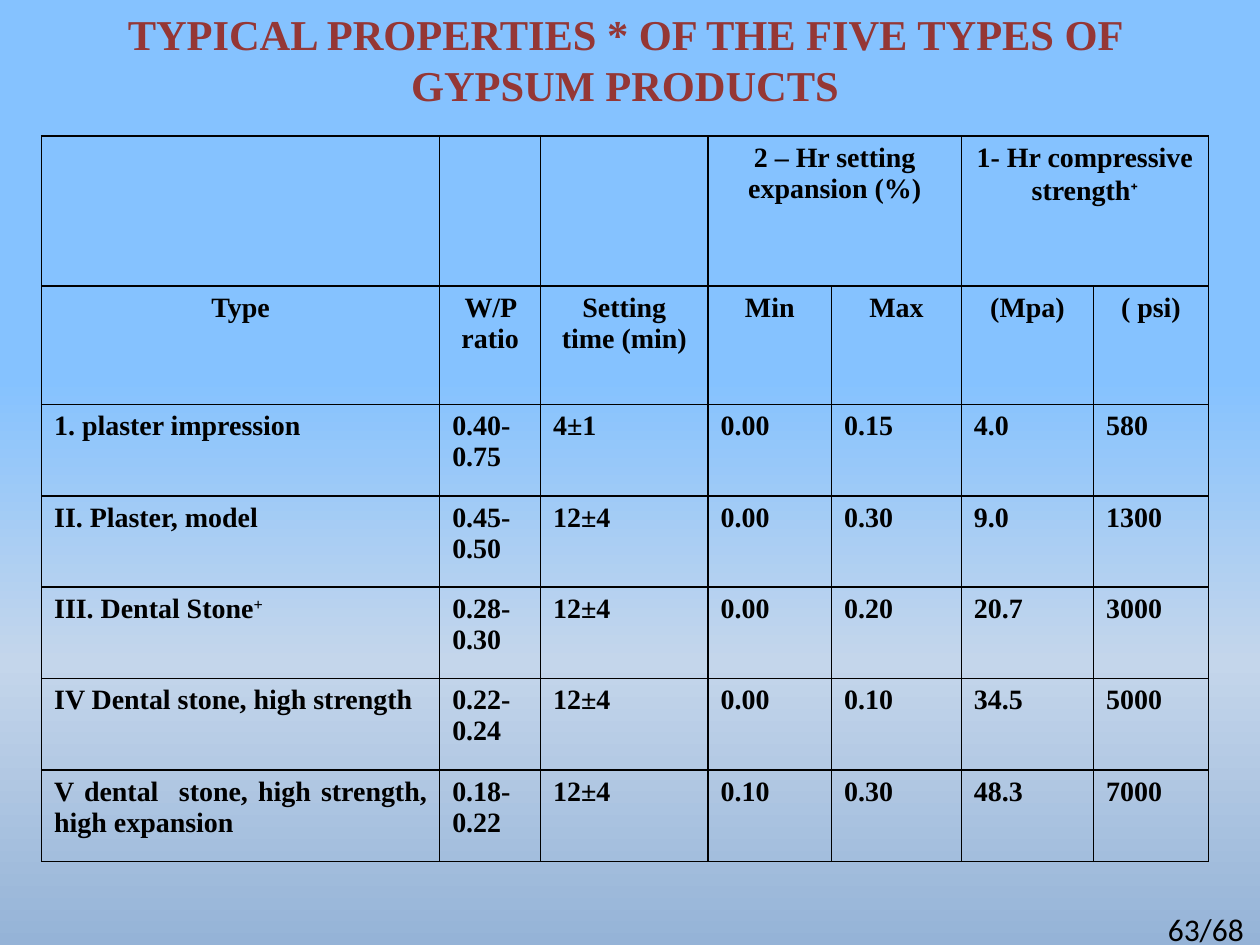
from dataclasses import dataclass
from lxml import etree
from pptx import Presentation
from pptx.dml.color import RGBColor
from pptx.enum.text import MSO_ANCHOR as Anchor, PP_ALIGN as Align
from pptx.oxml.ns import qn
from pptx.slide import Slide
from pptx.util import Inches, Pt

BLACK = RGBColor(0x00, 0x00, 0x00)
BRICK = RGBColor(0x95, 0x37, 0x35)
SKY = RGBColor(0x85, 0xC2, 0xFF)
MIST = RGBColor(0xC4, 0xD6, 0xEB)
STEEL = RGBColor(0x95, 0xB3, 0xD7)

WIDTH, HEIGHT = Inches(10), Inches(7.5)
COLUMNS = [31.6, 8, 13.3, 9.8, 10.3, 10.5, 9.1]
ROWS = [15.87, 12.53] + [9.67] * 5
MERGES = [(3, 4), (5, 6)]
SUPERSCRIPT = "+"

HEADINGS = [
    ["", "", "", "2 – Hr setting expansion (%)", "", "1- Hr compressive strength+", ""],
    ["Type", "W/P ratio", "Setting time (min)", "Min", "Max", "(Mpa)", "( psi)"],
]
PRODUCTS = [
    ["1. plaster impression", "0.40-0.75", "4±1", "0.00", "0.15", "4.0", "580"],
    ["II. Plaster, model", "0.45-0.50", "12±4", "0.00", "0.30", "9.0", "1300"],
    ["III. Dental Stone+", "0.28-0.30", "12±4", "0.00", "0.20", "20.7", "3000"],
    ["IV Dental stone, high strength", "0.22-0.24", "12±4", "0.00", "0.10", "34.5", "5000"],
    ["V dental  stone, high strength, high expansion", "0.18-0.22", "12±4", "0.10", "0.30", "48.3", "7000"],
]


def across(percent):
    """Turn a percentage of the slide's width into a length."""
    return round(WIDTH * percent / 100)


def down(percent):
    """Turn a percentage of the slide's height into a length."""
    return round(HEIGHT * percent / 100)


@dataclass
class PropertySlide:
    """Hold the current slide and its text style, and add elements to it."""

    slide: Slide
    font: str = "Times New Roman"
    heading_mark_font: str = "Cabin"
    body_size: float = 16
    border: float = 1

    def background(self, stops):
        """Fill the slide with a gradient running from top to bottom."""
        fill = self.slide.background.fill
        fill.gradient()
        fill.gradient_angle = 270
        stop_list = self.slide.element.find(".//" + qn("a:gsLst"))
        for stop in list(stop_list):
            stop_list.remove(stop)
        for position, color in stops:
            stop = etree.SubElement(stop_list, qn("a:gs"), pos=str(position * 1000))
            etree.SubElement(stop, qn("a:srgbClr"), val=str(color))

    def run(self, paragraph, text, color=BLACK, **format_values):
        """Add a run in the slide's style, with any differing values."""
        run = paragraph.add_run()
        run.text = text
        run.font.color.rgb = color
        style = {"name": self.font, "size": Pt(self.body_size), "bold": True}
        for name, value in {**style, **format_values}.items():
            setattr(run.font, name, value)
        return run

    def text(self, area, text, align, anchor=Anchor.TOP, wrap=True, **format_values):
        """Add a text box with one paragraph."""
        left, top, width, height = area
        box = self.slide.shapes.add_textbox(across(left), down(top), across(width), down(height))
        frame = box.text_frame
        for name, value in {"word_wrap": wrap, "vertical_anchor": anchor}.items():
            setattr(frame, name, value)
        paragraph = frame.paragraphs[0]
        paragraph.alignment = align
        self.run(paragraph, text, **format_values)

    def cell(self, cell, text, align, mark_font):
        """Write a clear cell with black borders."""
        properties = cell._tc.get_or_add_tcPr()
        for side in ("a:lnL", "a:lnR", "a:lnT", "a:lnB"):
            line = etree.SubElement(properties, qn(side), w=str(Pt(self.border)))
            solid = etree.SubElement(line, qn("a:solidFill"))
            etree.SubElement(solid, qn("a:srgbClr"), val=str(BLACK))
        cell.fill.background()
        paragraph = cell.text_frame.paragraphs[0]
        paragraph.alignment = align
        body, mark, _ = text.partition(SUPERSCRIPT)
        if body:
            self.run(paragraph, body)
        if mark:
            raised = self.run(paragraph, mark, name=mark_font)
            raised.font._element.set("baseline", "30000")

    def table(self, left, top, headings, products):
        """Add the table of properties, with centred headings."""
        frame = self.slide.shapes.add_table(
            len(ROWS), len(COLUMNS), across(left), down(top), across(sum(COLUMNS)), down(sum(ROWS)))
        table = frame.table
        for name in ("first_row", "horz_banding"):
            setattr(table, name, False)
        for column, share in zip(table.columns, COLUMNS):
            column.width = across(share)
        for row, share in zip(table.rows, ROWS):
            row.height = down(share)
        for first, last in MERGES:
            table.cell(0, first).merge(table.cell(0, last))
        for row, texts in enumerate(headings + products):
            is_heading = row < len(headings)
            align = Align.CENTER if is_heading else Align.JUSTIFY
            mark_font = self.heading_mark_font if is_heading else self.font
            for column, text in enumerate(texts):
                self.cell(table.cell(row, column), text, align, mark_font)


def main():
    """Build and save the gypsum properties slide."""
    presentation = Presentation()
    for name, value in {"slide_width": WIDTH, "slide_height": HEIGHT}.items():
        setattr(presentation, name, value)
    page = PropertySlide(presentation.slides.add_slide(presentation.slide_layouts[6]))
    page.background([(40, SKY), (70, MIST), (100, STEEL)])
    page.text((4.2, 0, 90.8, 12.6), "TYPICAL PROPERTIES * OF THE FIVE TYPES OF GYPSUM PRODUCTS",
              Align.CENTER, Anchor.MIDDLE, color=BRICK, size=Pt(24.3))
    page.table(3.3, 14.4, HEADINGS, PRODUCTS)
    page.text((91.7, 95.6, 8.1, 5.3), "63/68", Align.LEFT, wrap=False,
              name="Calibri", size=Pt(18), bold=False)
    presentation.save("out.pptx")


if __name__ == "__main__":
    main()
